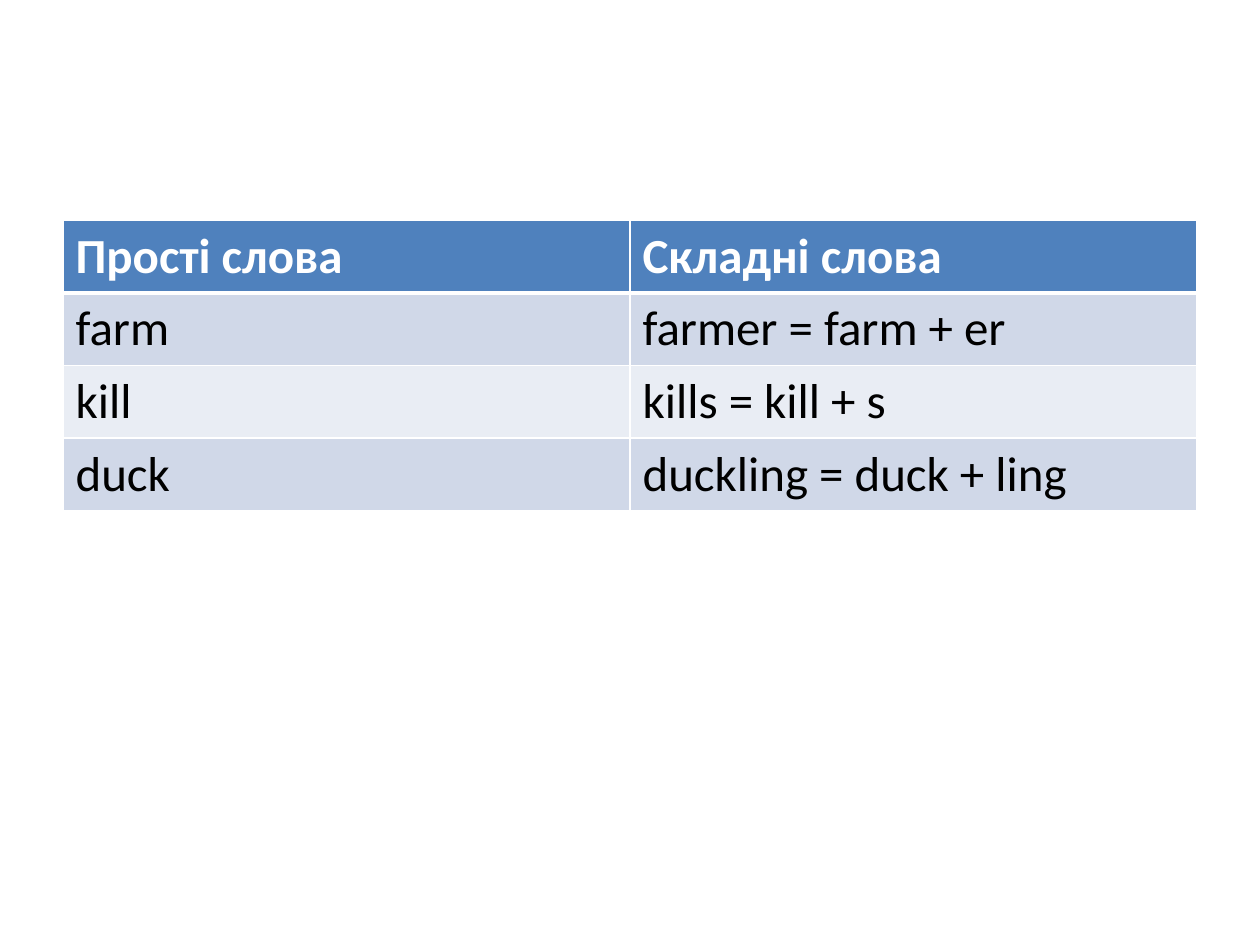
from lxml.etree import SubElement
from pptx import Presentation
from pptx.dml.color import RGBColor
from pptx.oxml.ns import qn
from pptx.util import Inches, Pt

WORDS = [
    ("Прості слова", "Складні слова"),
    ("farm", "farmer = farm + er"),
    ("kill", "kills = kill + s"),
    ("duck", "duckling = duck + ling"),
]
WHITE, BLACK = "FFFFFF", "000000"
HEADER_FILL = "4F81BD"
BAND_FILLS = ("E9EDF4", "D0D8E8")


def paint(color_format, color):
    color_format.rgb = RGBColor.from_string(color)


def add_border(cell, side, color, points):
    """Draw one side of a cell: L, R, T or B, called in that order before the fill."""
    line = SubElement(cell._tc.get_or_add_tcPr(), qn(f"a:ln{side}"), w=str(Pt(points)))
    solid = SubElement(line, qn("a:solidFill"))
    SubElement(solid, qn("a:srgbClr"), val=color)


def fill_cell(cell, text, row):
    is_header = row == 0
    edges = {"L": 1, "R": 1, "T": 3 if row == 1 else 1, "B": 3 if is_header else 1}
    for side, points in edges.items():
        add_border(cell, side, WHITE, points)
    cell.fill.solid()
    paint(cell.fill.fore_color, HEADER_FILL if is_header else BAND_FILLS[row % 2])

    cell.text_frame.text = text
    font = cell.text_frame.paragraphs[0].runs[0].font
    font.name, font.size, font.bold = "Calibri", Pt(28), is_header
    paint(font.color, WHITE if is_header else BLACK)


def add_word_table(slide):
    table = slide.shapes.add_table(
        len(WORDS), len(WORDS[0]), Inches(0.5), Inches(1.75), Inches(9), Inches(2.27)
    ).table
    for row, words in enumerate(WORDS):
        for column, word in enumerate(words):
            fill_cell(table.cell(row, column), word, row)


def main():
    presentation = Presentation()
    presentation.slide_width, presentation.slide_height = Inches(10), Inches(7.5)
    slide = presentation.slides.add_slide(presentation.slide_layouts[6])
    add_word_table(slide)
    presentation.save("out.pptx")


if __name__ == "__main__":
    main()
